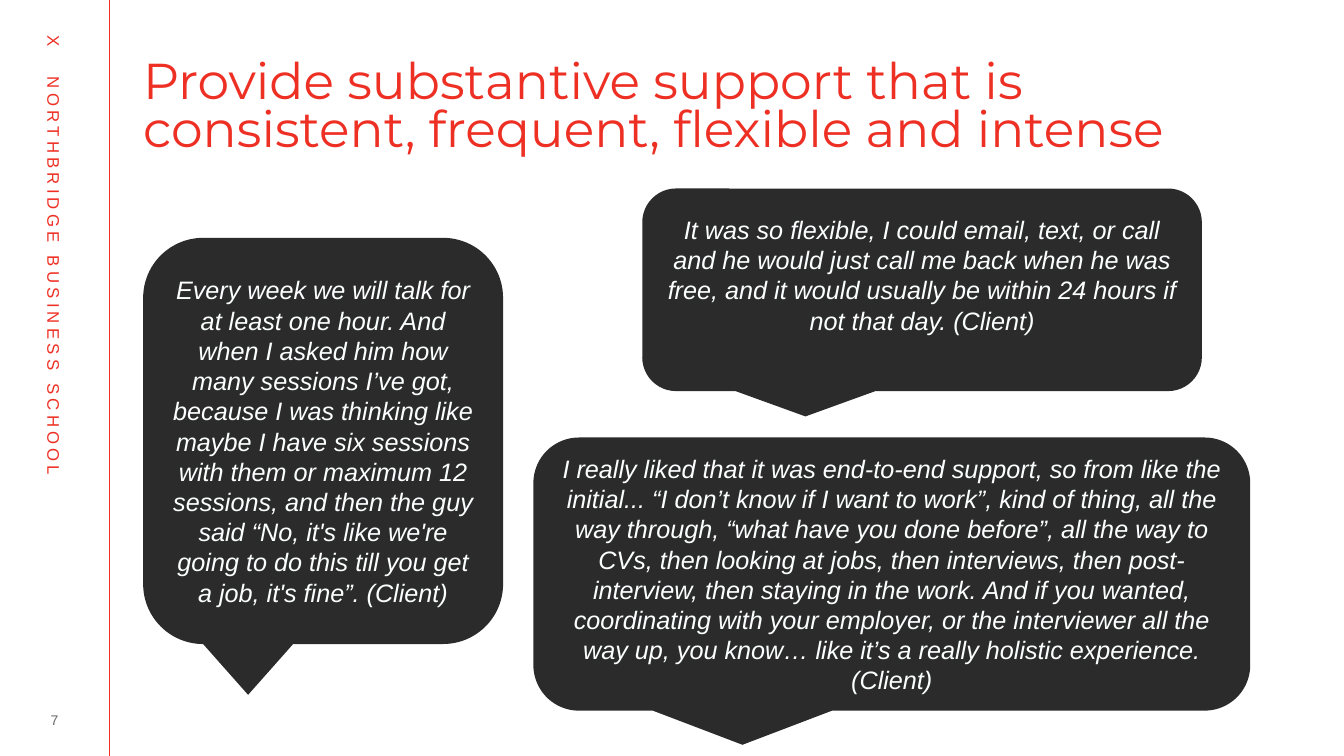
from dataclasses import dataclass

from lxml import etree
from pptx import Presentation
from pptx.dml.color import RGBColor
from pptx.enum import shapes, text
from pptx.oxml import ns
from pptx.util import Inches, Pt


@dataclass(frozen=True)
class Theme:
    red: str = "EE3024"
    title_red: str = "ED2F24"
    dark: str = "2B2B2B"
    light: str = "FCFFFF"
    grey: str = "6B6B6B"
    title_font: str = "Montserrat"
    body_font: str = "Arial"
    title_size: int = 36
    quote_size: int = 18
    banner_size: int = 12
    number_size: int = 10


@dataclass(frozen=True)
class Area:
    left: float
    top: float
    width: float
    height: float

    def lengths(self) -> tuple:
        return tuple(Inches(n) for n in (self.left, self.top, self.width, self.height))


@dataclass(frozen=True)
class Quote:
    area: Area
    words: str
    bottom: float = 0.05


THEME = Theme()
QUOTES = [
    Quote(
        Area(5.29, 4.34, 7.11, 2.71),
        "I really liked that it was end-to-end support, so from like the initial... "
        "“I don’t know if I want to work”, kind of thing, all the way through, "
        "“what have you done before”, all the way to CVs, then looking at jobs, "
        "then interviews, then post-interview, then staying in the work. And if you "
        "wanted, coordinating with your employer, or the interviewer all the way up, "
        "you know… like it’s a really holistic experience. (Client)",
    ),
    Quote(
        Area(6.37, 1.87, 5.55, 2.01),
        "It was so flexible, I could email, text, or call and he would just call me "
        "back when he was free, and it would usually be within 24 hours if not that "
        "day. (Client)",
        bottom=0.35,
    ),
    Quote(
        Area(1.42, 2.36, 3.57, 4.03),
        "Every week we will talk for at least one hour. And when I asked him how many "
        "sessions I’ve got, because I was thinking like maybe I have six sessions with "
        "them or maximum 12 sessions, and then the guy said “No, it's like we're going "
        "to do this till you get a job, it's fine”. (Client)",
    ),
]


def write(box, words: str, *, size: int, color: str, font: str = THEME.body_font,
          italic: bool = False, align=text.PP_ALIGN.LEFT, anchor=text.MSO_ANCHOR.TOP,
          margins: tuple = (0.1, 0.05, 0.1, 0.05), spacing: float = 1.0):
    """Fill the box with one formatted paragraph; margins run left, top, right, bottom."""
    frame = box.text_frame
    frame.word_wrap = True
    frame.auto_size = text.MSO_AUTO_SIZE.NONE
    frame.vertical_anchor = anchor
    (frame.margin_left, frame.margin_top,
     frame.margin_right, frame.margin_bottom) = map(Inches, margins)
    para = frame.paragraphs[0]
    para.alignment = align
    para.line_spacing = spacing
    span = para.add_run()
    span.text = words
    span.font.name = font
    span.font.size = Pt(size)
    span.font.italic = italic
    span.font.color.rgb = RGBColor.from_string(color)
    return para


def draw_sidebar(page) -> None:
    rule = page.shapes.add_connector(shapes.MSO_CONNECTOR.STRAIGHT,
                                     Inches(1.08), 0, Inches(1.08), Inches(7.5))
    rule.line.color.rgb = RGBColor.from_string(THEME.red)
    rule.line.width = Pt(0.5)
    etree.SubElement(rule._element.spPr, ns.qn("a:effectLst"))

    banner = page.shapes.add_textbox(*Area(-2.3, 2.94, 5.67, 0.3).lengths())
    banner.rotation = 90
    para = write(banner, "X\tNORTHBRIDGE BUSINESS SCHOOL",
                 size=THEME.banner_size, color=THEME.red)
    para.runs[0].font._element.set("spc", "300")
    stops = etree.SubElement(para._p.get_or_add_pPr(), ns.qn("a:tabLst"))
    etree.SubElement(stops, ns.qn("a:tab"), pos=str(Inches(0.41)), algn="l")

    number = page.shapes.add_textbox(*Area(0.26, 7.02, 0.56, 0.25).lengths())
    write(number, "7", size=THEME.number_size, color=THEME.grey,
          align=text.PP_ALIGN.CENTER, anchor=text.MSO_ANCHOR.MIDDLE, margins=(0, 0, 0, 0))


def draw_title(page) -> None:
    title = page.shapes.title
    title.left, title.top, title.width, title.height = Area(1.42, 0.39, 11.34, 1.2).lengths()
    write(title, "Provide substantive support that is consistent, frequent, flexible and intense",
          size=THEME.title_size, color=THEME.title_red, font=THEME.title_font,
          margins=(0, 0.21, 0, 0), spacing=0.8)


def draw_quote(page, quote: Quote) -> None:
    bubble = page.shapes.add_shape(shapes.MSO_SHAPE.ROUNDED_RECTANGULAR_CALLOUT,
                                   *quote.area.lengths())
    bubble.shadow.inherit = False
    bubble.fill.solid()
    bubble.fill.fore_color.rgb = RGBColor.from_string(THEME.dark)
    bubble.line.fill.background()
    write(bubble, quote.words, size=THEME.quote_size, color=THEME.light, italic=True,
          align=text.PP_ALIGN.CENTER, anchor=text.MSO_ANCHOR.MIDDLE,
          margins=(0.1, 0.05, 0.1, quote.bottom))


def main() -> None:
    deck = Presentation()
    deck.slide_width, deck.slide_height = Inches(13.33), Inches(7.5)
    page = deck.slides.add_slide(deck.slide_layouts.get_by_name("Title Only"))
    draw_sidebar(page)
    draw_title(page)
    for quote in QUOTES:
        draw_quote(page, quote)
    deck.save("out.pptx")


if __name__ == "__main__":
    main()
